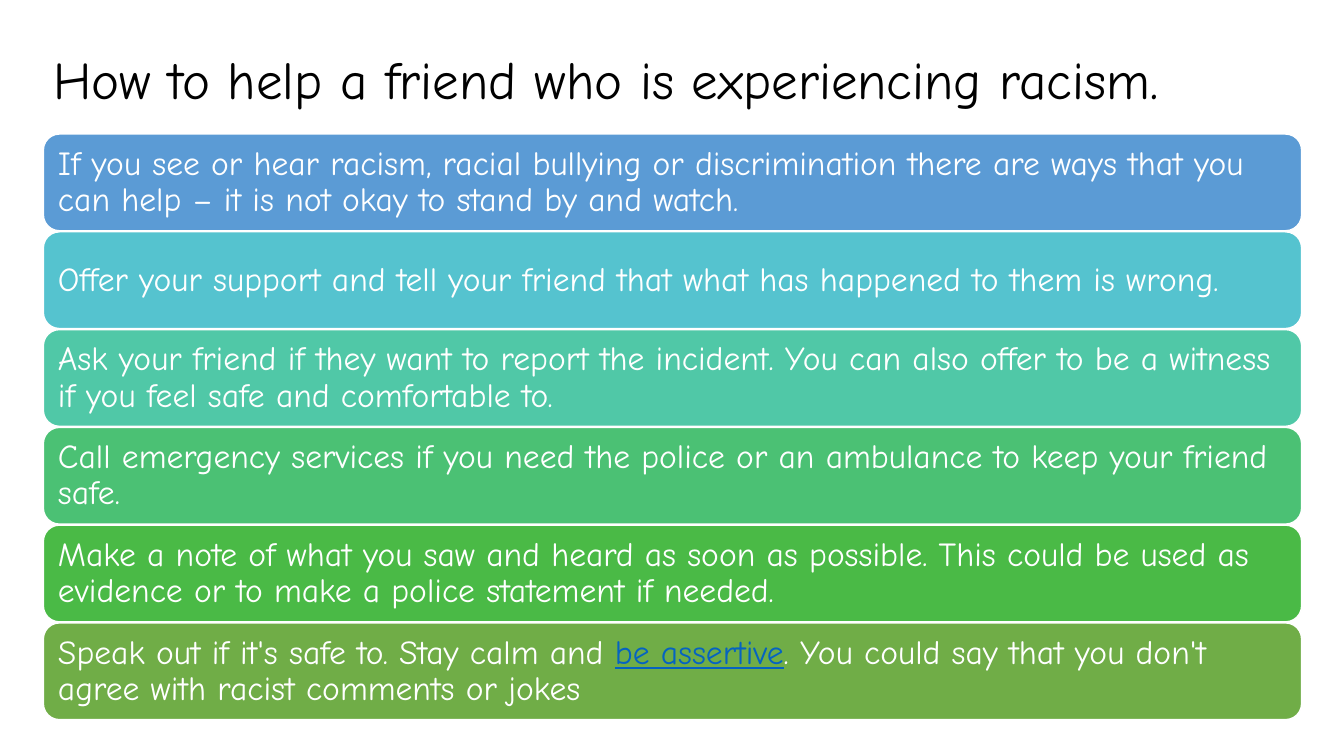
import pptx
import pptx.util
import pptx.dml.color
import pptx.enum.shapes
import pptx.enum.text

Inches = pptx.util.Inches
Pt = pptx.util.Pt
RGBColor = pptx.dml.color.RGBColor
Anchor = pptx.enum.text.MSO_ANCHOR
Align = pptx.enum.text.PP_ALIGN

BLACK = RGBColor(0x00, 0x00, 0x00)
WHITE = RGBColor(0xFF, 0xFF, 0xFF)
LINK = RGBColor(0x05, 0x63, 0xC1)
BLUE = RGBColor(0x5B, 0x9B, 0xD5)
AQUA = RGBColor(0x55, 0xC3, 0xCF)
TEAL = RGBColor(0x50, 0xC8, 0xA7)
MINT = RGBColor(0x4B, 0xC1, 0x74)
GREEN = RGBColor(0x4A, 0xBA, 0x46)
OLIVE = RGBColor(0x70, 0xAD, 0x47)

FONT = "Comic Neue"
TITLE = "How to help a friend who is experiencing racism."
LINKED = "be assertive"
TIPS = [
    (BLUE, ["If you see or hear racism, racial bullying or discrimination there are ways "
            "that you can help – it is not okay to stand by and watch."]),
    (AQUA, ["Offer your support and tell your friend that what has happened to them is wrong."]),
    (TEAL, ["Ask your friend if they want to report the incident. You can also offer to be "
            "a witness if you feel safe and comfortable to."]),
    (MINT, ["Call emergency services if you need the police or an ambulance to keep your "
            "friend safe."]),
    (GREEN, ["Make a note of what you saw and heard as soon as possible. This could be used "
             "as evidence or to make a police statement if needed."]),
    (OLIVE, ["Speak out if it's safe to. Stay calm and ", LINKED,
             ". You could say that you don't agree with racist comments or jokes"]),
]

LEFT, WIDTH = 0.43, 12.48
TOP, HEIGHT, GAP = 1.33, 0.96, 0.01
INSET = Inches(0.1)
TITLE_FRAME = {"word_wrap": True, "vertical_anchor": Anchor.TOP, "margin_top": Inches(0.18)}
TIP_FRAME = {"word_wrap": True, "vertical_anchor": Anchor.MIDDLE,
             "margin_left": INSET, "margin_right": INSET,
             "margin_top": INSET, "margin_bottom": INSET}


def assign(item, values):
    for name, value in values.items():
        setattr(item, name, value)


def write(shape, parts, size, color, frame):
    assign(shape.text_frame, frame)
    line = shape.text_frame.paragraphs[0]
    assign(line, {"alignment": Align.LEFT, "line_spacing": 0.9})
    for part in parts:
        run = line.add_run()
        run.text = part
        linked = part == LINKED
        assign(run.font, {"name": FONT, "size": Pt(size), "underline": linked})
        run.font.color.rgb = LINK if linked else color


def main():
    deck = pptx.Presentation()
    assign(deck, {"slide_width": Inches(13.33), "slide_height": Inches(7.5)})
    slide = deck.slides.add_slide(deck.slide_layouts[6])

    title = slide.shapes.add_textbox(Inches(LEFT), Inches(0.35), Inches(WIDTH), Inches(1.45))
    write(title, [TITLE], 37.8, BLACK, TITLE_FRAME)

    for row, (color, parts) in enumerate(TIPS):
        top = TOP + row * (HEIGHT + GAP)
        bar = slide.shapes.add_shape(pptx.enum.shapes.MSO_SHAPE.ROUNDED_RECTANGLE,
                                     Inches(LEFT), Inches(top), Inches(WIDTH), Inches(HEIGHT))
        bar.shadow.inherit = False
        bar.fill.solid()
        bar.fill.fore_color.rgb = color
        bar.line.color.rgb = WHITE
        bar.line.width = Pt(1)
        write(bar, parts, 24, WHITE, TIP_FRAME)

    deck.save("out.pptx")


if __name__ == "__main__":
    main()
